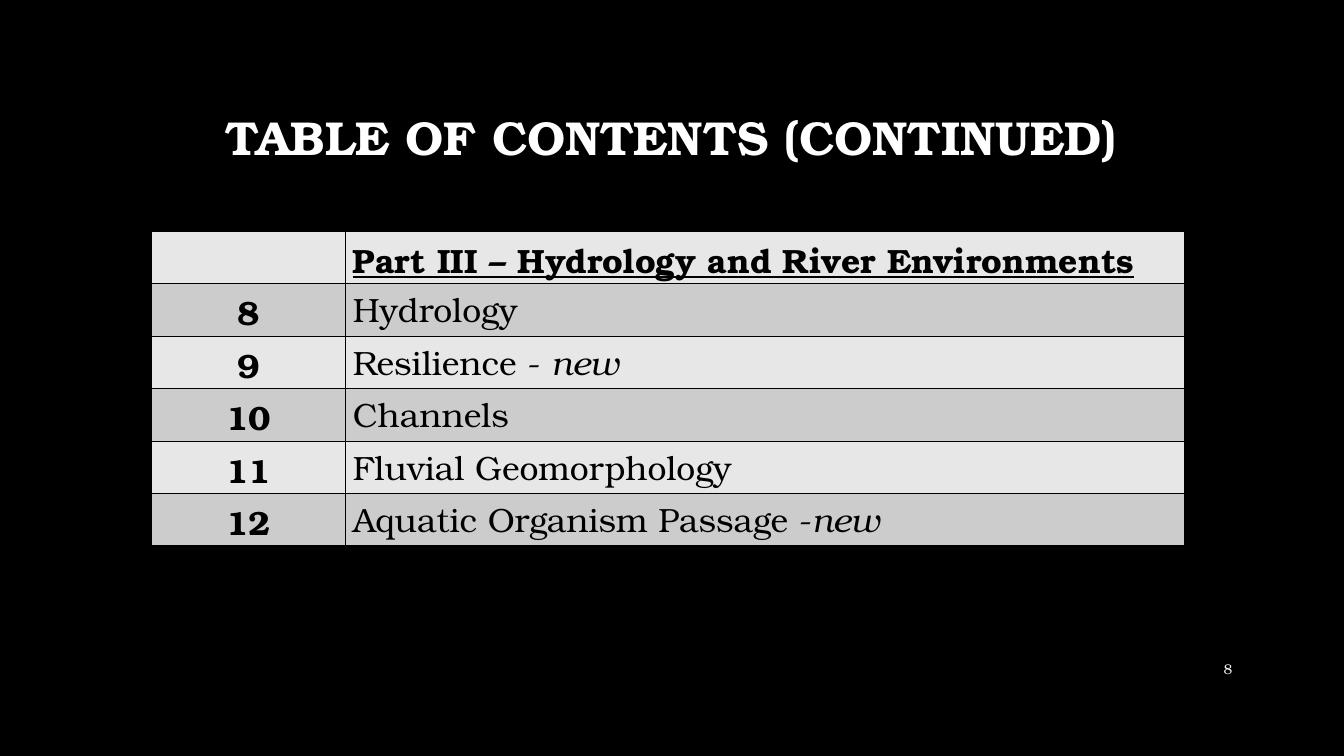
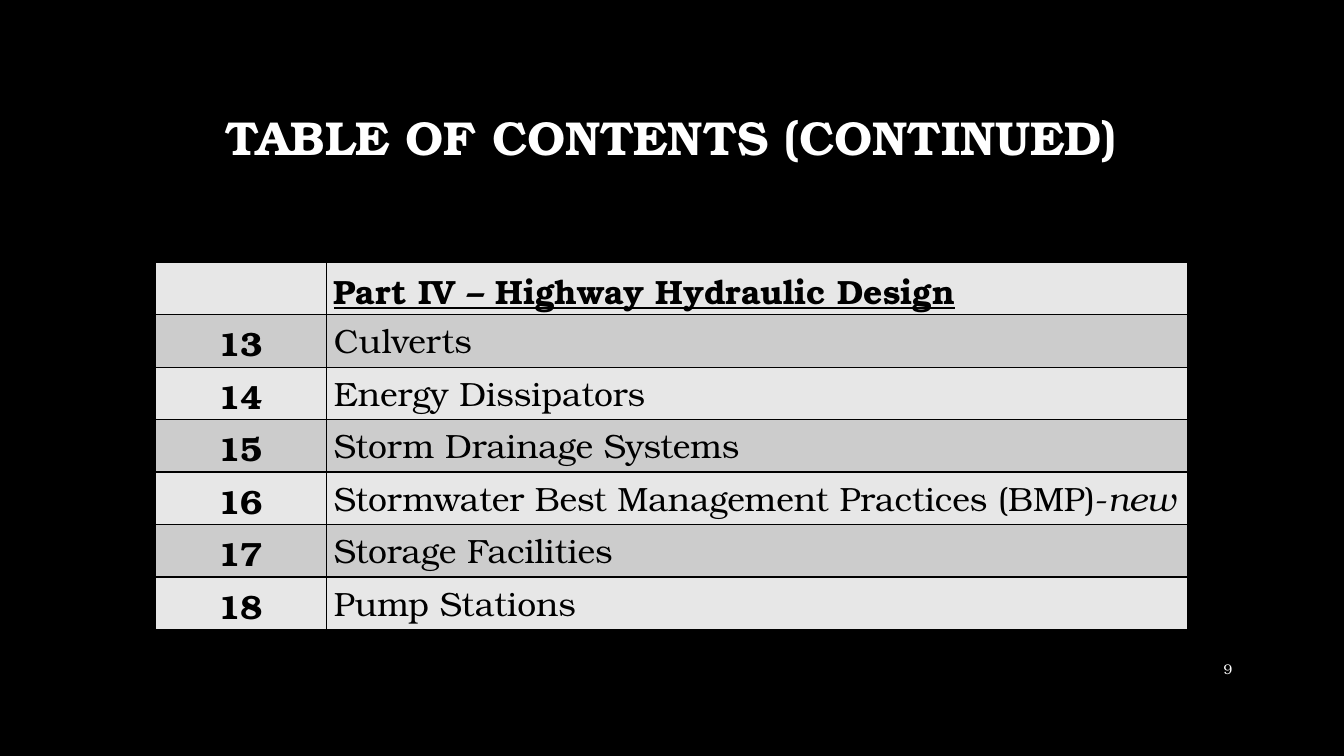
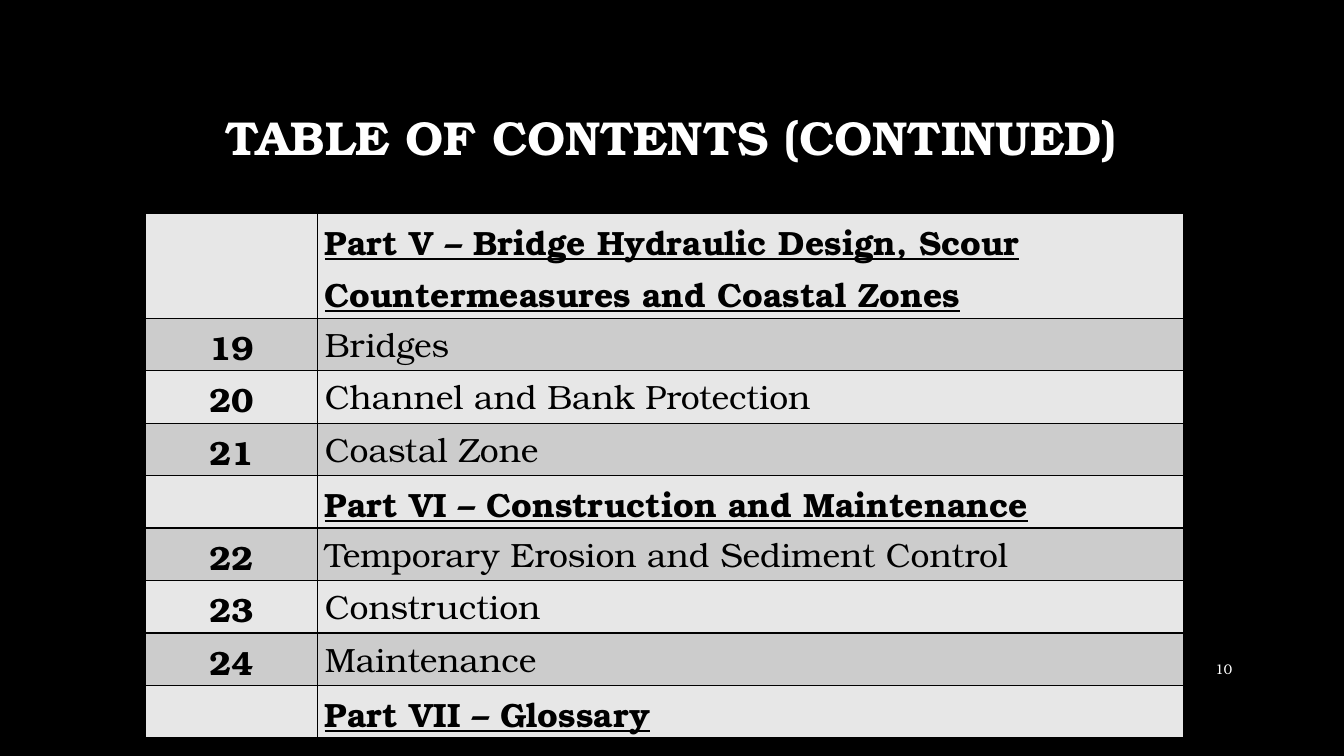
"""Build three table-of-contents slides, numbering chapters across them."""
from itertools import count

from lxml.etree import SubElement as Sub
from pptx import Presentation
from pptx.dml.color import RGBColor
from pptx.enum.text import MSO_ANCHOR as Anchor, PP_ALIGN as Align
from pptx.oxml.ns import qn
from pptx.util import Pt

BLACK = RGBColor(0, 0, 0)
WHITE = RGBColor(255, 255, 255)
BANDS = RGBColor(0xE7, 0xE7, 0xE7), RGBColor(0xCC, 0xCC, 0xCC)
FONT = "TeX Gyre Bonum"
TITLE = "TABLE OF CONTENTS (CONTINUED)"
ROW = 37.5
WRAP = 50

PAGES = [
    (108.2, 165.2, 138.6, 599.2, [
        "Part III – Hydrology and River Environments",
        "Hydrology",
        "Resilience - new",
        "Channels",
        "Fluvial Geomorphology",
        "Aquatic Organism Passage -new",
    ]),
    (111, 187.3, 122.2, 615.3, [
        "Part IV – Highway Hydraulic Design",
        "Culverts",
        "Energy Dissipators",
        "Storm Drainage Systems",
        "Stormwater Best Management Practices (BMP)-new",
        "Storage Facilities",
        "Pump Stations",
    ]),
    (104, 152.3, 122.8, 618.5, [
        "Part V – Bridge Hydraulic Design, Scour Countermeasures and Coastal Zones",
        "Bridges",
        "Channel and Bank Protection",
        "Coastal Zone",
        "Part VI – Construction and Maintenance",
        "Temporary Erosion and Sediment Control",
        "Construction",
        "Maintenance",
        "Part VII – Glossary",
    ]),
]


def style(para, size, color, align, space=1.0, bold=False):
    para.alignment = align
    para.line_spacing = space
    font = para.font
    font.name, font.size, font.bold = FONT, Pt(size), bold
    font.color.rgb = color


def label(slide, text, box, *look):
    frame = slide.shapes.add_textbox(*map(Pt, box)).text_frame
    frame.word_wrap = True
    frame.vertical_anchor = Anchor.MIDDLE
    para = frame.paragraphs[0]
    para.text = text
    style(para, *look)


deck = Presentation()
deck.slide_width, deck.slide_height = Pt(960), Pt(540)
chapter = count(8)

for page, (left, top, first, second, names) in enumerate(PAGES, 8):
    slide = deck.slides.add_slide(deck.slide_layouts[6])
    fill = slide.background.fill
    fill.solid()
    fill.fore_color.rgb = BLACK
    label(slide, TITLE, (72, 48.2, 815, 104.4), 34, WHITE, Align.CENTER, 0.9, True)
    label(slide, str(page), (828.3, 463.5, 59, 28.8), 10, WHITE, Align.RIGHT)

    highs = [ROW * (2 if len(name) > WRAP else 1) for name in names]
    size = left, top, first + second, sum(highs)
    table = slide.shapes.add_table(len(names), 2, *map(Pt, size)).table
    table.first_row = table.horz_banding = False
    table.columns[0].width, table.columns[1].width = Pt(first), Pt(second)

    for row, (name, high) in enumerate(zip(names, highs)):
        table.rows[row].height = Pt(high)
        part = name.startswith("Part ")
        num, entry = table.cell(row, 0), table.cell(row, 1)
        for cell in (num, entry):
            cell.margin_left = cell.margin_right = Pt(5.3)
            cell.margin_top = cell.margin_bottom = 0
            props = cell._tc.get_or_add_tcPr()
            for side in ("a:lnL", "a:lnR", "a:lnT", "a:lnB"):
                line = Sub(props, qn(side), w=str(Pt(1)))
                Sub(Sub(line, qn("a:solidFill")), qn("a:srgbClr"), val=str(BLACK))
            cell.fill.solid()
            cell.fill.fore_color.rgb = BANDS[row % 2]

        para = num.text_frame.paragraphs[0]
        if not part:
            para.text = str(next(chapter))
            style(para, 24, BLACK, Align.CENTER, 1.07, True)

        para = entry.text_frame.paragraphs[0]
        style(para, 24, BLACK, Align.LEFT, 1.07, part)
        para.font.underline = part
        text, new, _ = name.partition("new")
        para.add_run().text = text
        if new:
            run = para.add_run()
            run.text = new
            run.font.italic = True

deck.save("out.pptx")
